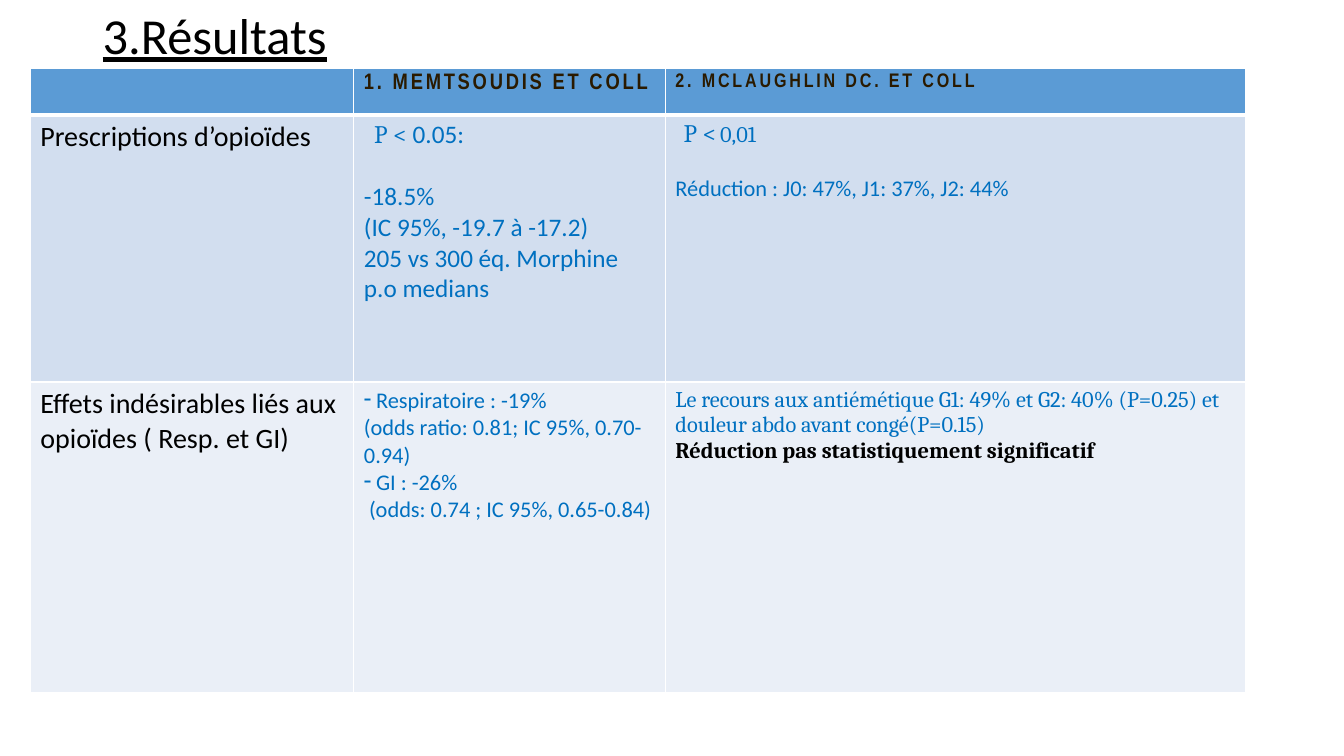
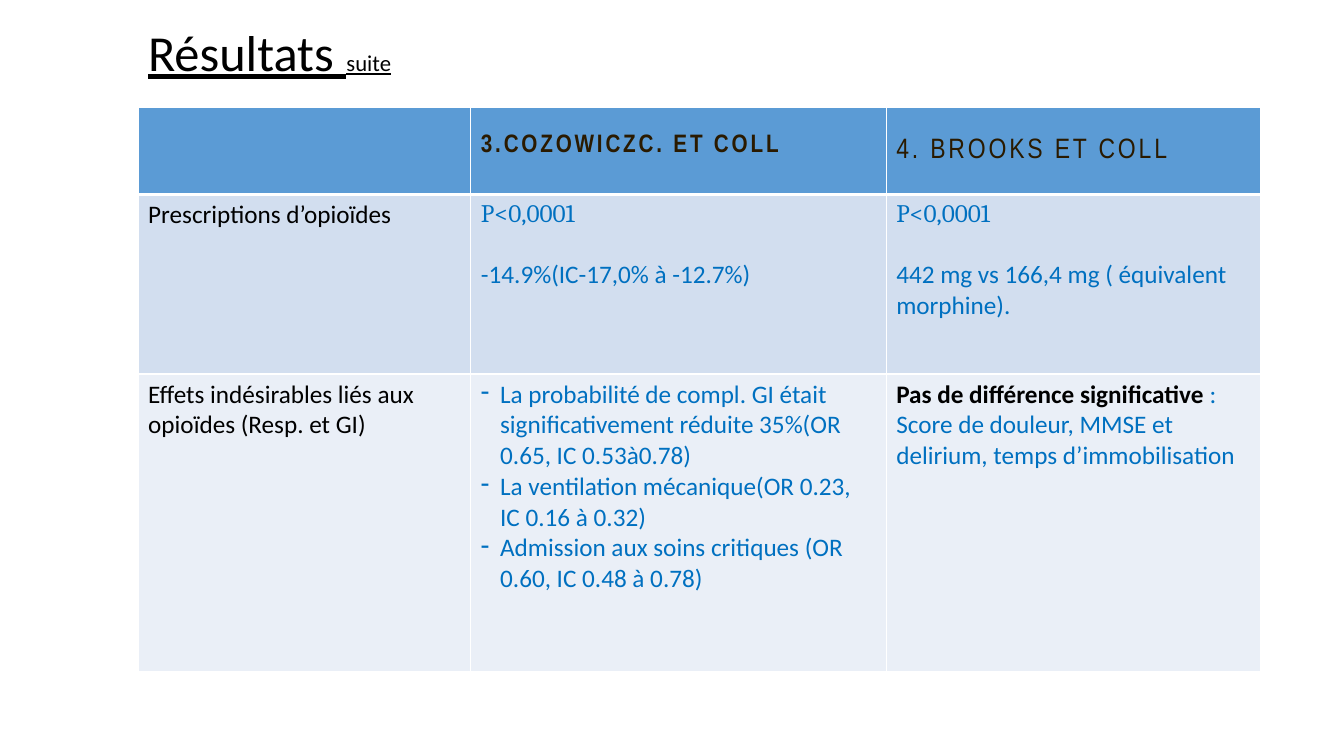
from lxml.etree import SubElement
from pptx import Presentation
from pptx.dml.color import RGBColor
from pptx.enum.text import MSO_ANCHOR
from pptx.oxml.ns import qn
from pptx.util import Emu, Pt

HUES = {
    "head": "5B9BD5", "band": "D2DEEF", "pale": "EAEFF7", "rule": "FFFFFF",
    "black": "000000", "blue": "0070C0", "brown": "2A1A00",
}
# style: font, colour, bold, underline, letter spacing in points
STYLES = {
    "title": ("Calibri", "black", False, True, 0),
    "head": ("Arial Narrow", "brown", True, False, 2),
    "light": ("Arial Narrow", "brown", False, False, 2),
    "label": ("Calibri", "black", False, False, 0),
    "strong": ("Calibri", "black", True, False, 0),
    "body": ("Calibri", "blue", False, False, 0),
    "serif": ("Cambria", "blue", False, False, 0),
    "verdict": ("Cambria", "black", True, False, 0),
}
FILLS = ("head", "band", "pale")


def px(num):
    """100 px make one inch."""
    return Emu(num * 9144)


def para(*runs, gap=0, left=0, dash=False):
    """Each run is (text, style, size)."""
    return {"runs": runs, "gap": gap, "left": left, "dash": dash}


def one(text, style, size, **opts):
    return [para((text, style, size), **opts)]


def paint(font, style, size):
    name, hue, bold, under, space = STYLES[style]
    font.name, font.size, font.bold = name, Pt(size), bold
    font.color.rgb = RGBColor.from_string(HUES[hue])
    if under:
        font.underline = True
    if space:
        font._rPr.set("spc", str(space * 100))


def write(frame, paras):
    for num, item in enumerate(paras):
        par = frame.add_paragraph() if num else frame.paragraphs[0]
        if item["gap"]:
            par.space_before = Pt(item["gap"])
        props = par._p.get_or_add_pPr()
        if item["left"]:
            props.set("marL", str(px(item["left"])))
        if item["dash"]:
            props.set("indent", str(-px(item["left"])))
            SubElement(props, qn("a:buChar")).set("char", "-")
        # The first run sets the paragraph font; others override it
        base = item["runs"][0][1:]
        paint(par.font, *base)
        for text, *look in item["runs"]:
            run = par.add_run()
            run.text = text
            if tuple(look) != base:
                paint(run.font, *look)


def edge(cell, row):
    """White cell borders, thick under the header."""
    props = cell._tc.get_or_add_tcPr()
    wide = {"lnT": 3 if row == 1 else 1, "lnB": 3 if row == 0 else 1}
    for side in ("lnL", "lnR", "lnT", "lnB"):
        line = SubElement(props, qn("a:" + side))
        line.set("w", str(Pt(wide.get(side, 1))))
        fill = SubElement(line, qn("a:solidFill"))
        SubElement(fill, qn("a:srgbClr")).set("val", HUES["rule"])


def add_title(slide, box, *runs):
    frame = slide.shapes.add_textbox(*map(px, box)).text_frame
    frame.word_wrap = True
    frame.vertical_anchor = MSO_ANCHOR.MIDDLE
    write(frame, [para(*runs)])
    frame.paragraphs[0].line_spacing = 0.9


def add_grid(slide, spot, cols, rows, cells, drops=(5, 5, 5)):
    """Results table; drops are the top margins of the header cells."""
    box = (*spot, sum(cols), sum(rows))
    grid = slide.shapes.add_table(len(rows), len(cols), *map(px, box)).table
    grid.first_row = grid.horz_banding = False
    for col, wide in zip(grid.columns, cols):
        col.width = px(wide)
    for num, (tall, line) in enumerate(zip(rows, cells)):
        grid.rows[num].height = px(tall)
        for pos, paras in enumerate(line):
            cell = grid.cell(num, pos)
            edge(cell, num)
            cell.fill.solid()
            cell.fill.fore_color.rgb = RGBColor.from_string(HUES[FILLS[num]])
            cell.margin_top = px(drops[pos] if num == 0 else 5)
            write(cell.text_frame, paras)


def first(slide):
    add_title(slide, (92, 7, 1150, 61), ("3.Résultats", "title", 36))
    add_grid(slide, (30, 68), (321, 309, 575), (46, 265, 308), [
        # Studies
        [[],
         one("1. MEMTSOUDIS ET COLL", "head", 16),
         one("2. MCLAUGHLIN DC. ET COLL", "head", 14)],
        # Opioid use
        [one("Prescriptions d’opioïdes", "label", 20),
         [para(("P <", "serif", 18), (" 0.05:", "body", 18), left=10),
          para(("-18.5%", "body", 18), gap=22),
          para(("(IC 95%, -19.7 à -17.2)", "body", 18)),
          para(("205 vs 300 éq. Morphine p.o medians", "body", 18))],
         [para(("P <", "serif", 18), (" ", "serif", 12),
               ("0,01", "serif", 16), left=8),
          para(("Réduction : J0: 47%, J1: 37%, J2: 44%", "body", 16),
               gap=19)]],
        # Side effects
        [one("Effets indésirables liés aux opioïdes ( Resp. et GI)",
             "label", 20),
         [para(("Respiratoire : -19%", "body", 16), left=12, dash=True),
          para(("(odds ratio: 0.81; IC 95%, 0.70- 0.94)", "body", 16)),
          para(("GI : -26%", "body", 16), left=12, dash=True),
          para(("(odds: 0.74 ; IC 95%, 0.65-0.84)", "body", 16), left=5)],
         [para(("Le recours aux antiémétique G1: 49% et G2: 40% (P=0.25) "
                "et douleur abdo avant congé(P=0.15)", "serif", 16)),
          para(("Réduction pas statistiquement significatif",
                "verdict", 16))]],
    ])


def second(slide):
    add_title(slide, (137, 16, 1113, 74), ("Résultats", "title", 36),
              (" ", "title", 39.6), ("suite", "title", 16.2))
    risks = (
        "La probabilité de compl. GI était significativement réduite "
        "35%(OR 0.65, IC 0.53à0.78)",
        "La ventilation mécanique(OR 0.23, IC 0.16 à 0.32)",
        "Admission aux soins critiques (OR 0.60, IC 0.48 à 0.78)",
    )
    odds = para(("P<0,0001", "serif", 18))
    add_grid(slide, (137, 107), (330, 412, 371), (86, 178, 295), [
        # Studies
        [[],
         one("3.COZOWICZC. ET COLL", "head", 18),
         one("4. BROOKS ET COLL", "light", 20)],
        # Opioid use
        [one("Prescriptions d’opioïdes", "label", 18),
         [odds, para(("-14.9%(IC-17,0% à -12.7%)", "body", 18), gap=22)],
         [odds, para(("442 mg vs 166,4 mg ( équivalent morphine).",
                      "body", 18), gap=22)]],
        # Side effects
        [one("Effets indésirables liés aux opioïdes (Resp. et GI)",
             "label", 18),
         [para((risk, "body", 18), left=19, dash=True) for risk in risks],
         [para(("Pas de différence significative ", "strong", 18),
               (":", "body", 18)),
          para(("Score de douleur, MMSE et delirium, temps "
                "d’immobilisation", "body", 18))]],
    ], drops=(5, 26, 30))


def main():
    deck = Presentation()
    deck.slide_width, deck.slide_height = px(1333), px(750)
    for build in (first, second):
        build(deck.slides.add_slide(deck.slide_layouts[6]))
    deck.save("out.pptx")


if __name__ == "__main__":
    main()
